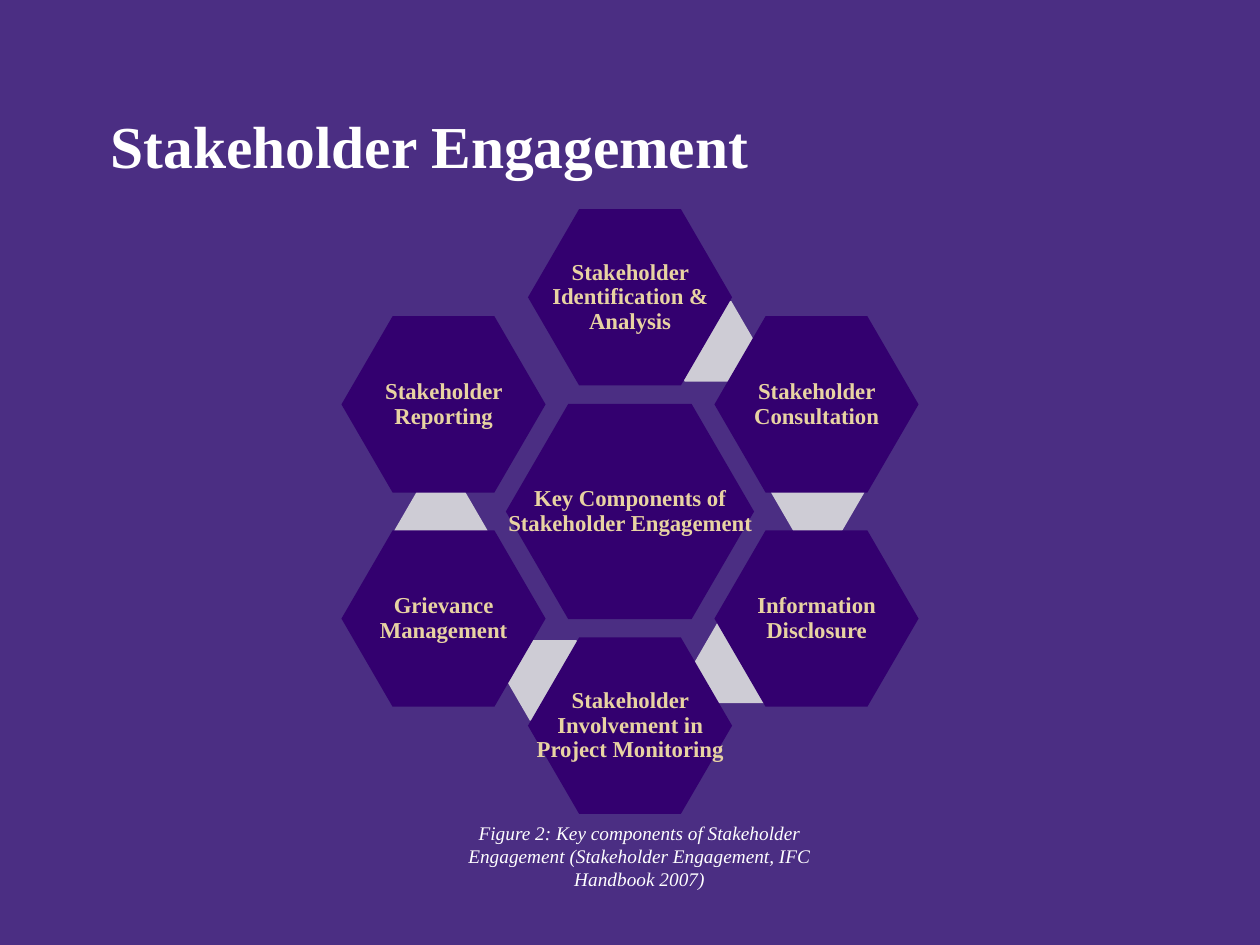
from pptx import Presentation
from pptx.dml.color import RGBColor
from pptx.enum.shapes import MSO_SHAPE as Shape
from pptx.enum.text import MSO_ANCHOR as Anchor, MSO_AUTO_SIZE as AutoSize, PP_ALIGN as Align
from pptx.util import Inches, Pt

COLOURS = {
    "background": "4B2E83",
    "hexagon": "33006F",
    "link": "CECCD5",
    "label": "E8D3A2",
    "text": "FFFFFF",
}
FONT = "Times New Roman"
TITLE = "Stakeholder Engagement"
CAPTION = ("Figure 2: Key components of Stakeholder Engagement "
           "(Stakeholder Engagement, IFC Handbook 2007)")
HUB = "Key Components of Stakeholder Engagement"
RING = [
    ("Stakeholder Identification & Analysis", 0, -2, (5.25, 2.39)),
    ("Stakeholder Consultation", 1, -1, (6.12, 3.59)),
    ("Information Disclosure", 1, 1, (5.51, 4.94)),
    ("Stakeholder Involvement in Project Monitoring", 0, 2, (4.02, 5.08)),
    ("Grievance Management", -1, 1, (3.13, 3.89)),
    ("Stakeholder Reporting", -1, -1, None),
]
CENTRE_X, CENTRE_Y = 5.0, 4.06
STEP_X, STEP_Y = 1.48, 0.85
HUB_SIZE = (1.97, 1.71)
RING_SIZE = (1.62, 1.4)
LINK_SIZE = (0.74, 0.64)


def rgb(name):
    return RGBColor.from_string(COLOURS[name])


def style(para, size, colour, bold=False, italic=False):
    font = para.font
    font.name, font.size = FONT, Pt(size)
    font.bold, font.italic = bold, italic
    font.color.rgb = rgb(colour)


def add_hexagon(page, left, top, size, colour):
    hexagon = page.shapes.add_shape(
        Shape.HEXAGON, *map(Inches, (left, top, *size)))
    hexagon.adjustments[0] = 0.29
    hexagon.shadow.inherit = False
    hexagon.fill.solid()
    hexagon.fill.fore_color.rgb = rgb(colour)
    hexagon.line.fill.background()


def add_text(page, text, left, top, width, height):
    box = page.shapes.add_textbox(*map(Inches, (left, top, width, height)))
    box.text_frame.word_wrap = True
    para = box.text_frame.paragraphs[0]
    para.text = text
    para.alignment = Align.CENTER
    return box.text_frame, para


def add_component(page, text, column, row, size):
    left = CENTRE_X + column * STEP_X - size[0] / 2
    top = CENTRE_Y + row * STEP_Y - size[1] / 2
    add_hexagon(page, left, top, size, "hexagon")
    frame, para = add_text(page, text, left, top, *size)
    frame.vertical_anchor = Anchor.MIDDLE
    frame.margin_left = frame.margin_right = Inches(0.01)
    frame.margin_top = frame.margin_bottom = Inches(0.02)
    para.line_spacing = 0.9
    style(para, 13, "label", bold=True)


def add_title(page):
    title = page.shapes.title
    title.left, title.top, title.width, title.height = map(
        Inches, (0.78, 0.41, 8.95, 1.08))
    frame = title.text_frame
    frame.text = TITLE
    frame.vertical_anchor = Anchor.BOTTOM
    frame.auto_size = AutoSize.NONE
    para = frame.paragraphs[0]
    para.alignment = Align.LEFT
    para.line_spacing = 0.9
    style(para, 34, "text", bold=True)


def main():
    deck = Presentation()
    deck.slide_width, deck.slide_height = Inches(10), Inches(7.5)
    page = deck.slides.add_slide(deck.slide_layouts[5])
    page.background.fill.solid()
    page.background.fill.fore_color.rgb = rgb("background")

    add_title(page)
    frame, para = add_text(page, CAPTION, 3.37, 6.47, 3.41, 0.66)
    para.space_after = Pt(10)
    style(para, 11, "text", italic=True)

    add_component(page, HUB, 0, 0, HUB_SIZE)
    for text, column, row, link in RING:
        if link:
            add_hexagon(page, *link, LINK_SIZE, "link")
        add_component(page, text, column, row, RING_SIZE)

    deck.save("out.pptx")


if __name__ == "__main__":
    main()
